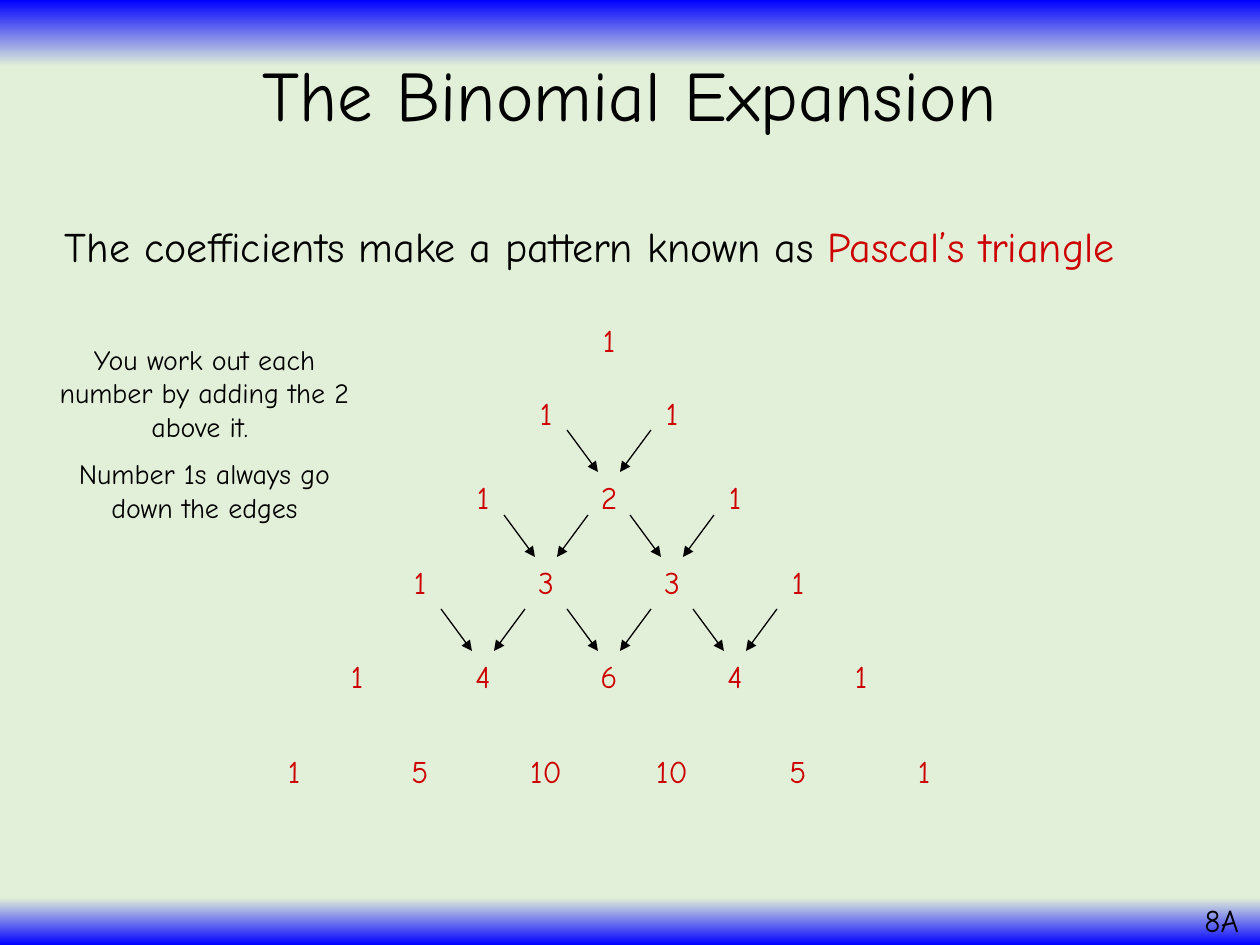
from copy import deepcopy
from math import comb

from pptx import Presentation
from pptx.dml.color import RGBColor
from pptx.enum.shapes import MSO_CONNECTOR
from pptx.enum.text import MSO_ANCHOR, MSO_AUTO_SIZE, PP_ALIGN
from pptx.oxml.ns import qn
from pptx.oxml.xmlchemy import OxmlElement
from pptx.util import Emu, Pt

SCALE = 914400 / 126
FONT = "Comic Neue"
COLORS = {"blue": "0000FF", "green": "E2F0D9", "black": "000000", "red": "CC0000"}
BANDS = [(0, "blue"), (0.07, "green"), (0.95, "green"), (1, "blue")]
ROW_TOPS = [0, 73, 157, 242, 336, 431]
ARROW_ROWS = range(2, 5)


def px(length):
    """Turn pixels into EMU."""
    return Emu(round(length * SCALE))


def color(name):
    """Look up a named colour."""
    return RGBColor.from_string(COLORS[name])


def style(span, size, ink):
    """Format one run."""
    span.font.name = FONT
    span.font.size = Pt(size)
    span.font.color.rgb = color(ink)


def add_text(page, box, lines, size, ink="black", align=PP_ALIGN.CENTER):
    """Place a wrapped text box with one paragraph per line."""
    frame = page.shapes.add_textbox(*map(px, box)).text_frame
    frame.text = "\n".join(lines)
    frame.word_wrap = True
    for para in frame.paragraphs:
        para.alignment = align
        for span in para.runs:
            style(span, size, ink)
    return frame


def add_arrow(page, start, end):
    """Draw a thin black arrow."""
    arrow = page.shapes.add_connector(MSO_CONNECTOR.STRAIGHT, *map(px, start + end))
    arrow.line.color.rgb = color("black")
    arrow.line.width = Pt(0.75)
    head = OxmlElement("a:tailEnd")
    head.set("type", "triangle")
    arrow.line._get_or_add_ln().append(head)
    arrow._element.spPr.append(OxmlElement("a:effectLst"))


def paint_background(page):
    """Fill the page with green between two blue bands."""
    fill = page.background.fill
    fill.gradient()
    fill.gradient_angle = 270
    stops = next(page.element.iter(qn("a:gsLst")))
    for stop in list(stops):
        stops.append(deepcopy(stop))
    for stop, (position, name) in zip(fill.gradient_stops, BANDS):
        stop.position = position
        stop.color.rgb = color(name)


def add_title(page, box):
    """Place the slide title."""
    frame = add_text(page, box, ["The Binomial Expansion"], 40.5)
    frame.vertical_anchor = MSO_ANCHOR.MIDDLE
    frame.paragraphs[0].line_spacing = 0.9


def add_statement(page, box):
    """Place the indented statement with its key term in red."""
    frame = add_text(page, box, ["The coefficients make a pattern known as "], 24,
                     align=PP_ALIGN.LEFT)
    frame.margin_left = px(44)
    para = frame.paragraphs[0]
    para.line_spacing = 0.9
    term = para.add_run()
    term.text = "Pascal’s triangle"
    style(term, 24, "red")


def add_note(page, box):
    """Place the rule for working out the numbers."""
    lines = ["You work out each number by adding the 2 above it. ",
             "Number 1s always go down the edges"]
    frame = add_text(page, box, lines, 16)
    frame.paragraphs[1].space_before = Pt(8)


def add_triangle(page, box):
    """Place Pascal's triangle and the arrows to its inner sums."""
    left, top, width, _ = box
    for row, offset in enumerate(ROW_TOPS):
        y = top + offset
        for place in range(row + 1):
            x = left + width // 2 + 126 * place - 63 * row
            value = str(comb(row, place))
            cell = 42 if len(value) == 1 else 64
            add_text(page, (x - cell // 2, y, cell, 50), [value], 18, "red")
            if row in ARROW_ROWS and 0 < place < row:
                for side in (-1, 1):
                    add_arrow(page, (x + 42 * side, y - 42), (x + 11 * side, y))


def add_section_label(page, box):
    """Place the section label in the corner."""
    frame = add_text(page, box, ["8A"], 18, align=PP_ALIGN.LEFT)
    frame.word_wrap = False
    frame.auto_size = MSO_AUTO_SIZE.SHAPE_TO_FIT_TEXT


def main():
    """Build and save the deck."""
    deck = Presentation()
    deck.slide_width, deck.slide_height = px(1260), px(945)
    page = deck.slides.add_slide(deck.slide_layouts[6])
    paint_background(page)
    add_statement(page, (21, 220, 1219, 624))
    add_triangle(page, (273, 315, 672, 481))
    add_note(page, (42, 336, 325, 198))
    add_title(page, (87, 30, 1086, 137))
    add_section_label(page, (1192, 895, 68, 50))
    deck.save("out.pptx")


if __name__ == "__main__":
    main()
